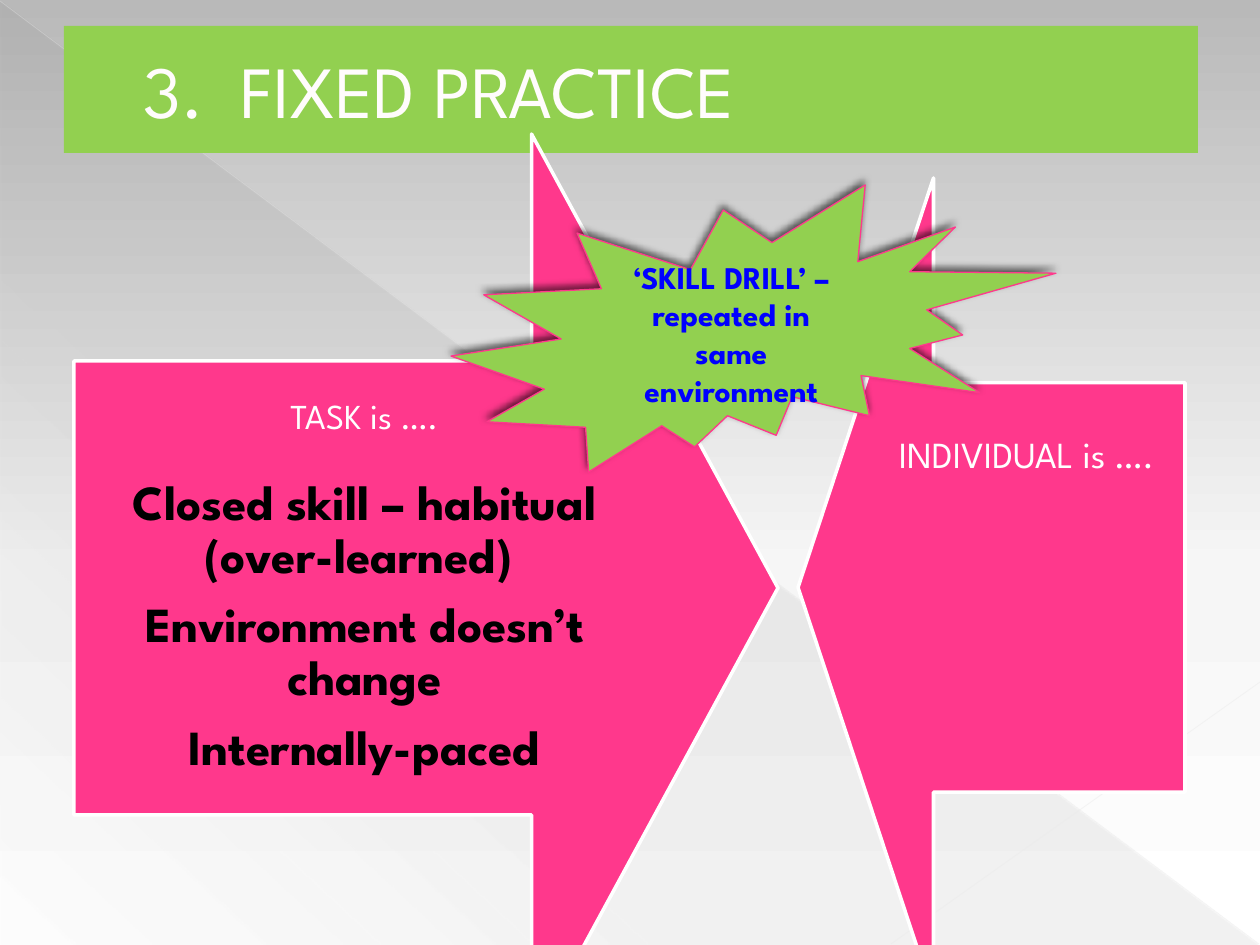
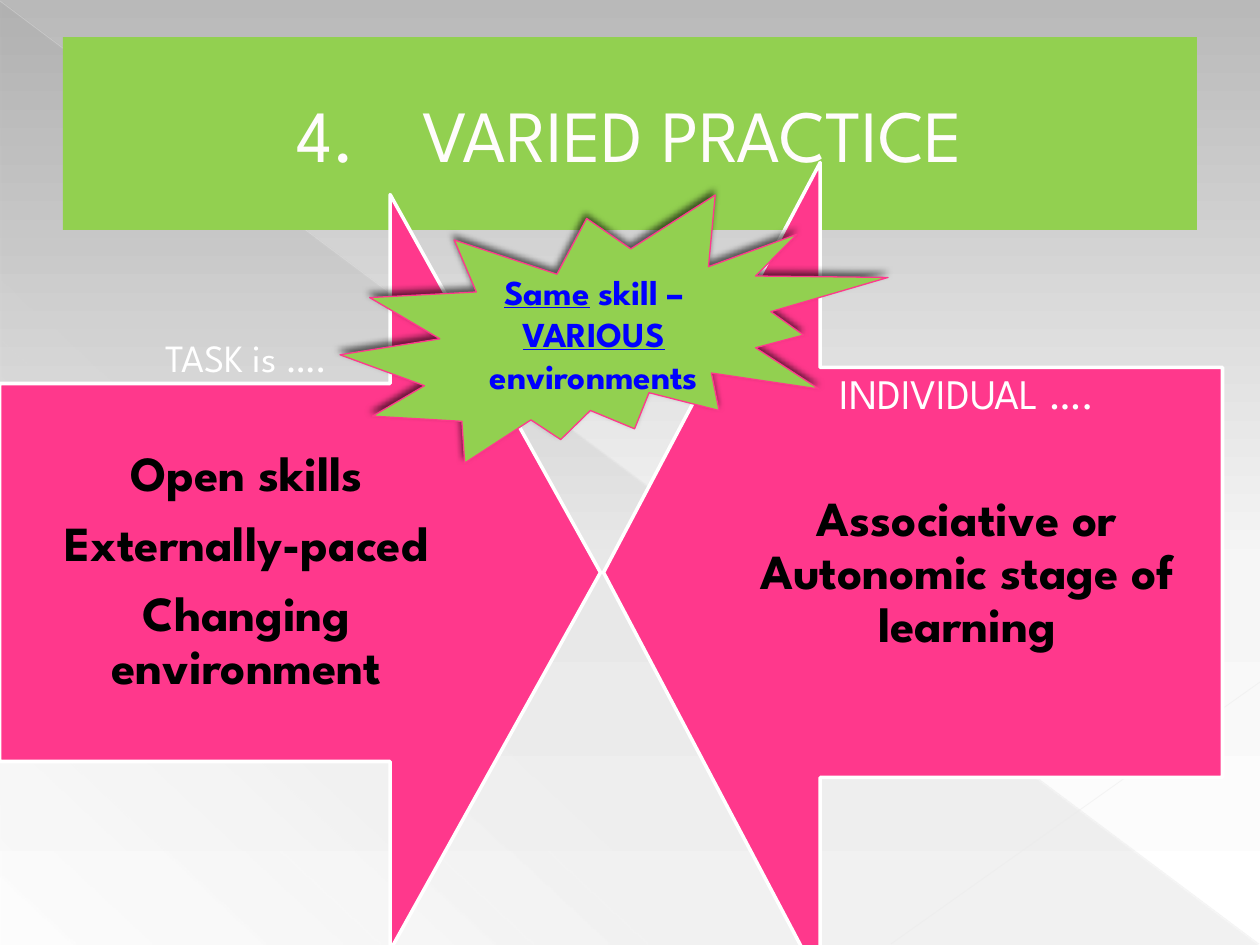
import lxml.etree
import pptx
import pptx.dml.color
import pptx.enum.shapes
import pptx.enum.text
import pptx.oxml
import pptx.oxml.ns
import pptx.util

SHAPE = pptx.enum.shapes.MSO_SHAPE
ALIGN = pptx.enum.text.PP_ALIGN
ANCHOR = pptx.enum.text.MSO_ANCHOR
FONT = "League Spartan"
PX = 914400 / 126
COLORS = {
    "band": "92D050", "block": "FF388C", "edge": "FFFFFF", "title": "FFFCFC",
    "heading": "FFFFFF", "body": "000000", "drill": "0000FF", "facet": "666666",
    "diagonal": "E8E8E8", "corner": "EAEAEA",
    "sky": "B9B9B9", "haze": "F6F6F6", "ground": "FFFFFF",
}


def px(n):
    """Turn px into EMU."""
    return pptx.util.Emu(round(n * PX))


def rgb(name):
    """Look up a named colour."""
    return pptx.dml.color.RGBColor.from_string(COLORS[name])


def xml(tag, body="", **attrs):
    """Build one DrawingML element."""
    pairs = "".join(f' {k}="{v}"' for k, v in attrs.items())
    return pptx.oxml.parse_xml(
        f'<a:{tag} {pptx.oxml.ns.nsdecls("a")}{pairs}>{body}</a:{tag}>')


def color_xml(name, alpha):
    """Describe a colour with its opacity in percent."""
    return f'<a:srgbClr val="{COLORS[name]}"><a:alpha val="{alpha * 1000}"/></a:srgbClr>'


def set_gradient(fill, root, stops, angle):
    """Give a fill any number of (position, colour, opacity) stops."""
    fill.gradient()
    old = root.xpath(".//a:gradFill")[0]
    gs = "".join(f'<a:gs pos="{pos * 1000}">{color_xml(name, alpha)}</a:gs>'
                 for pos, name, alpha in stops)
    old.getparent().replace(old, xml(
        "gradFill", f'<a:gsLst>{gs}</a:gsLst><a:lin ang="{angle * 60000}" scaled="0"/>',
        rotWithShape=1))


def add_text(p, text, size=28, color="body", bold=False, underline=False):
    """Add a formatted run to a paragraph."""
    r = p.add_run()
    r.text = text
    r.font.name, r.font.size = FONT, pptx.util.Pt(size)
    r.font.bold, r.font.underline = bold, underline
    r.font.color.rgb = rgb(color)


class Deck:
    """Hold the presentation style and the current slide."""

    def __init__(self):
        self.prs = pptx.Presentation()
        self.prs.slide_width, self.prs.slide_height = px(1260), px(945)

    def slide(self):
        """Start a slide with the shared backdrop."""
        self.s = self.prs.slides.add_slide(self.prs.slide_layouts[6])
        set_gradient(self.s.background.fill, self.s._element,
                     [(0, "sky", 100), (60, "haze", 100), (100, "ground", 100)], 90)
        sp = self.shape(SHAPE.RIGHT_TRIANGLE, (1, 2, 1258, 943))
        set_gradient(sp.fill, sp._element,
                     [(0, "facet", 10), (70, "facet", 8), (100, "facet", 1)], 133)
        self.line((0, 1, 1259, 944), "diagonal", 0.39, 35)
        self.line((1260, 682, 891, 944), "corner", 0.47, 45)

    def shape(self, kind, box, fill=None, line=None, width=1):
        """Add a preset shape without a shadow."""
        sp = self.s.shapes.add_shape(kind, *map(px, box))
        sp.shadow.inherit = False
        if fill:
            sp.fill.solid()
            sp.fill.fore_color.rgb = rgb(fill)
        if line:
            sp.line.color.rgb = rgb(line)
            sp.line.width = pptx.util.Pt(width)
        else:
            sp.line.fill.background()
        return sp

    def line(self, ends, color, width, alpha):
        """Add a faint straight line."""
        c = self.s.shapes.add_connector(
            pptx.enum.shapes.MSO_CONNECTOR.STRAIGHT, *map(px, ends))
        c.line.color.rgb = rgb(color)
        c.line.width = pptx.util.Pt(width)
        clr = c._element.xpath(".//a:ln//a:srgbClr")[0]
        clr.append(xml("alpha", val=alpha * 1000))
        c._element.spPr.append(xml("effectLst"))

    def title(self, number, text, box, align, margin, hang):
        """Add the title band with its numbered heading."""
        sp = self.shape(SHAPE.RECTANGLE, box, "band")
        tf = sp.text_frame
        tf.word_wrap, tf.vertical_anchor = True, ANCHOR.MIDDLE
        p = tf.paragraphs[0]
        p.alignment = align
        add_text(p, text, size=42, color="title")
        pPr = p._p.get_or_add_pPr()
        pPr.set("marL", str(px(margin)))
        pPr.set("indent", str(-px(hang)))
        pPr.append(xml("buFont", typeface=FONT))
        pPr.append(xml("buAutoNum", type="arabicPeriod", startAt=number))

    def arrow(self, box, rotation):
        """Add a wide block arrow."""
        sp = self.shape(SHAPE.DOWN_ARROW, box, "block", "edge", 2)
        sp.adjustments[0], sp.adjustments[1] = 0.5, 0.35
        sp.rotation = rotation

    def points(self, box, heading, size, gap=0, body=()):
        """Add a heading with bold points a gap below it."""
        tf = self.s.shapes.add_textbox(*map(px, box)).text_frame
        tf.word_wrap, tf.vertical_anchor = True, ANCHOR.TOP
        tf.margin_left = tf.margin_right = tf.margin_top = tf.margin_bottom = 0
        for i, text in enumerate((heading, *body)):
            p = tf.add_paragraph() if i else tf.paragraphs[0]
            p.alignment, p.line_spacing = ALIGN.CENTER, 0.9
            if i:
                p.space_before = px(gap if i == 1 else 17)
                add_text(p, text, bold=True)
            else:
                add_text(p, text, size=size, color="heading")

    def burst(self, box, size, runs):
        """Add the shadowed star with (text, underline) runs."""
        sp = self.shape(SHAPE.EXPLOSION2, box, "band", "block", 0.75)
        effects = sp._element.spPr.find(pptx.oxml.ns.qn("a:effectLst"))
        effects.append(xml("outerShdw", color_xml("body", 60), blurRad=pptx.util.Pt(4),
                           dist=pptx.util.Pt(3), dir=245 * 60000, rotWithShape=0))
        tf = sp.text_frame
        tf.word_wrap, tf.vertical_anchor = True, ANCHOR.MIDDLE
        p = tf.paragraphs[0]
        p.alignment = ALIGN.CENTER
        for text, underline in runs:
            add_text(p, text, size=size, color="drill", bold=True, underline=underline)


def main():
    """Build both practice slides."""
    deck = Deck()

    deck.slide()
    deck.title(3, "FIXED PRACTICE", (64, 26, 1134, 127), ALIGN.LEFT, 164, 97)
    deck.arrow((-28, 236, 908, 704), 270)
    deck.points((94, 399, 541, 380), "TASK is ….", 20, 41,
                ["Closed skill – habitual (over-learned) ",
                 "Environment doesn’t change", "Internally-paced"])
    deck.arrow((582, 394, 819, 387), 90)
    deck.points((887, 437, 279, 44), "INDIVIDUAL is ….", 21)
    deck.burst((451, 185, 605, 287), 18,
               [("‘SKILL DRILL’ – repeated in same environment", False)])

    deck.slide()
    deck.title(4, "VARIED PRACTICE", (63, 37, 1134, 193), ALIGN.CENTER, 126, 126)
    deck.arrow((-78, 272, 756, 601), 270)
    deck.points((20, 339, 453, 360), "TASK is ….", 22, 69,
                ["Open skills", "Externally-paced", "Changing environment"])
    deck.arrow((503, 263, 820, 619), 90)
    deck.points((736, 373, 462, 290), "INDIVIDUAL ….", 24, 76,
                ["Associative or Autonomic stage of learning"])
    deck.burst((340, 195, 548, 268), 20,
               [("Same", True), (" skill – ", False),
                ("VARIOUS ", True), ("environments", False)])

    deck.prs.save("out.pptx")


if __name__ == "__main__":
    main()
